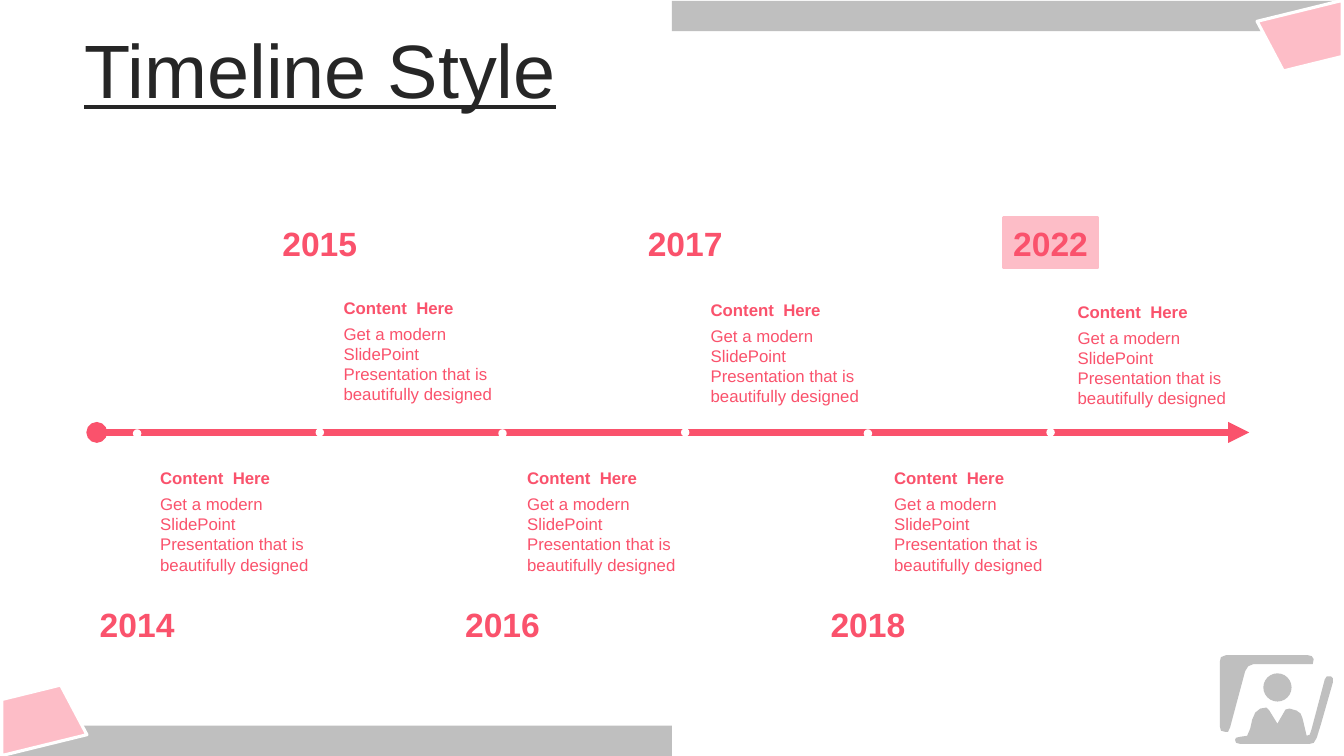
"""Build a six-stop timeline slide with alternating dates and descriptions."""
import pptx
import pptx.dml.color
import pptx.enum.shapes
import pptx.enum.text
import pptx.oxml
import pptx.oxml.ns
import pptx.util

Inches = pptx.util.Inches
Pt = pptx.util.Pt
Shape = pptx.enum.shapes.MSO_SHAPE
Align = pptx.enum.text.PP_ALIGN
Anchor = pptx.enum.text.MSO_ANCHOR
WIDTH, HEIGHT = 13.33, 7.5
ROSE, PINK, GRAY, WHITE, DARK = "FA526C", "FDBDC7", "BFBFBF", "FFFFFF", "262626"


def paint(color_format, color):
    color_format.rgb = pptx.dml.color.RGBColor.from_string(color)


def write(shape, text, size, color, bold=False, align=Align.LEFT, anchor=Anchor.MIDDLE, wrap=True):
    frame = shape.text_frame
    frame.word_wrap = wrap
    frame.vertical_anchor = anchor
    paragraph = frame.paragraphs[0]
    paragraph.text = text
    paragraph.alignment = align
    paragraph.font.name = "Arial"
    paragraph.font.size = Pt(size)
    paragraph.font.bold = bold
    paint(paragraph.font.color, color)
    return paragraph


presentation = pptx.Presentation()
presentation.slide_width = Inches(WIDTH)
presentation.slide_height = Inches(HEIGHT)
slide = presentation.slides.add_slide(presentation.slide_layouts[6])
shapes = slide.shapes

bar_height = HEIGHT * 0.04
corner_width, corner_height = 0.87, 0.54
corner_left, corner_top = 12.52, 0.1
corners = [
    (WIDTH / 2, 0.01, corner_left, corner_top, 166.2),
    (0, HEIGHT - bar_height, WIDTH - corner_left - corner_width, HEIGHT - corner_top - corner_height, 346.2),
]
for bar_left, bar_top, left, top, rotation in corners:
    bar = shapes.add_shape(Shape.RECTANGLE, Inches(bar_left), Inches(bar_top), Inches(WIDTH / 2), Inches(bar_height))
    bar.shadow.inherit = False
    bar.fill.solid()
    paint(bar.fill.fore_color, GRAY)
    bar.line.fill.background()
    corner = shapes.add_shape(Shape.TRAPEZOID, Inches(left), Inches(top), Inches(corner_width), Inches(corner_height))
    corner.shadow.inherit = False
    corner.rotation = rotation
    corner.fill.solid()
    paint(corner.fill.fore_color, PINK)
    paint(corner.line.color, WHITE)
    corner.line.width = Pt(2.25)

title_box = shapes.add_textbox(Inches(0.47), Inches(0.34), Inches(5.41), Inches(0.79))
title = write(title_box, "Timeline Style", 54, DARK, align=Align.CENTER)
title.font.underline = True
title.line_spacing = 0.9
title.space_before = Pt(10)

axis_y = 4.29
first_stop, stop_step = 1.36, 1.812
first_content, content_step = 1.49, 1.82
tick_length = 1.47
years = ["2014", "2015", "2016", "2017", "2018", "2022"]
upper_tops = {"2015": 2.9, "2017": 2.92, "2022": 2.94}
stops = [first_stop + index * stop_step for index in range(len(years))]

lines = [(12.39, axis_y, 0.96, axis_y, ROSE, 5, "triangle")]
for index in [0, 2, 4, 1, 3, 5]:
    start_y = axis_y - tick_length if index % 2 else axis_y + 0.01
    lines.append((stops[index], start_y, stops[index], start_y + tick_length, WHITE, 2, "oval"))
for start_x, start_y, end_x, end_y, color, weight, head in lines:
    connector = shapes.add_connector(
        pptx.enum.shapes.MSO_CONNECTOR.STRAIGHT, Inches(start_x), Inches(start_y), Inches(end_x), Inches(end_y)
    )
    paint(connector.line.color, color)
    connector.line.width = Pt(weight)
    properties = connector.line._get_or_add_ln()
    for tag, kind in [("a:headEnd", head), ("a:tailEnd", "oval")]:
        end = pptx.oxml.xmlchemy.OxmlElement(tag)
        end.set("type", kind)
        properties.append(end)
    connector._element.spPr.append(pptx.oxml.xmlchemy.OxmlElement("a:effectLst"))

year_width, year_height = 0.94, 0.5
for index, (year, stop) in enumerate(zip(years, stops)):
    year_top = 2.16 if index % 2 else 5.94
    year_box = shapes.add_shape(
        Shape.RECTANGLE, Inches(stop - year_width / 2), Inches(year_top), Inches(year_width), Inches(year_height)
    )
    year_box.shadow.inherit = False
    if year == years[-1]:
        year_box.fill.solid()
        paint(year_box.fill.fore_color, PINK)
        paint(year_box.line.color, PINK)
    else:
        year_box.fill.background()
        paint(year_box.line.color, WHITE)
    year_box.line.width = Pt(2)
    write(year_box, year, 24, ROSE, bold=True, align=Align.CENTER, wrap=False)

    left = first_content + index * content_step
    top = upper_tops.get(year, 4.59)
    description = shapes.add_textbox(Inches(left), Inches(top + 0.26), Inches(1.84), Inches(0.91))
    write(
        description,
        "Get a modern SlidePoint  Presentation that is beautifully designed",
        12,
        ROSE,
        anchor=Anchor.TOP,
    )
    heading = shapes.add_textbox(Inches(left), Inches(top), Inches(1.84), Inches(0.3))
    write(heading, "Content  Here", 12, ROSE, bold=True)

person_outline = [
    (1267, 718), (1275, 704), (1279, 703), (1286, 705), (1290, 708), (1292, 713), (1296, 730), (1299, 729),
    (1301, 723), (1314, 674), (1316, 671), (1320, 671), (1322, 673), (1322, 677), (1310, 719), (1306, 732),
    (1303, 737), (1299, 738), (1230, 738), (1226, 737), (1225, 734), (1226, 732), (1230, 731), (1237, 730),
    (1240, 723), (1242, 714), (1245, 707), (1250, 703), (1256, 702), (1259, 705),
]
frame_outline = [
    (1302, 659), (1243, 659), (1238, 661), (1235, 666), (1220, 722), (1218, 726), (1215, 726), (1211, 725),
    (1210, 721), (1210, 656), (1211, 652), (1216, 650), (1297, 650), (1301, 651), (1303, 654),
]
icon_parts = []
for outline in [person_outline, frame_outline]:
    builder = shapes.build_freeform(*outline[0], scale=Inches(0.01))
    builder.add_line_segments(outline[1:], close=True)
    icon_parts.append(builder.convert_to_shape())
icon_parts.append(shapes.add_shape(Shape.OVAL, Inches(12.53), Inches(6.68), Inches(0.28), Inches(0.28)))
for part in icon_parts:
    part.shadow.inherit = False
    part.fill.solid()
    paint(part.fill.fore_color, GRAY)
    part.line.fill.background()

presentation.save("out.pptx")
